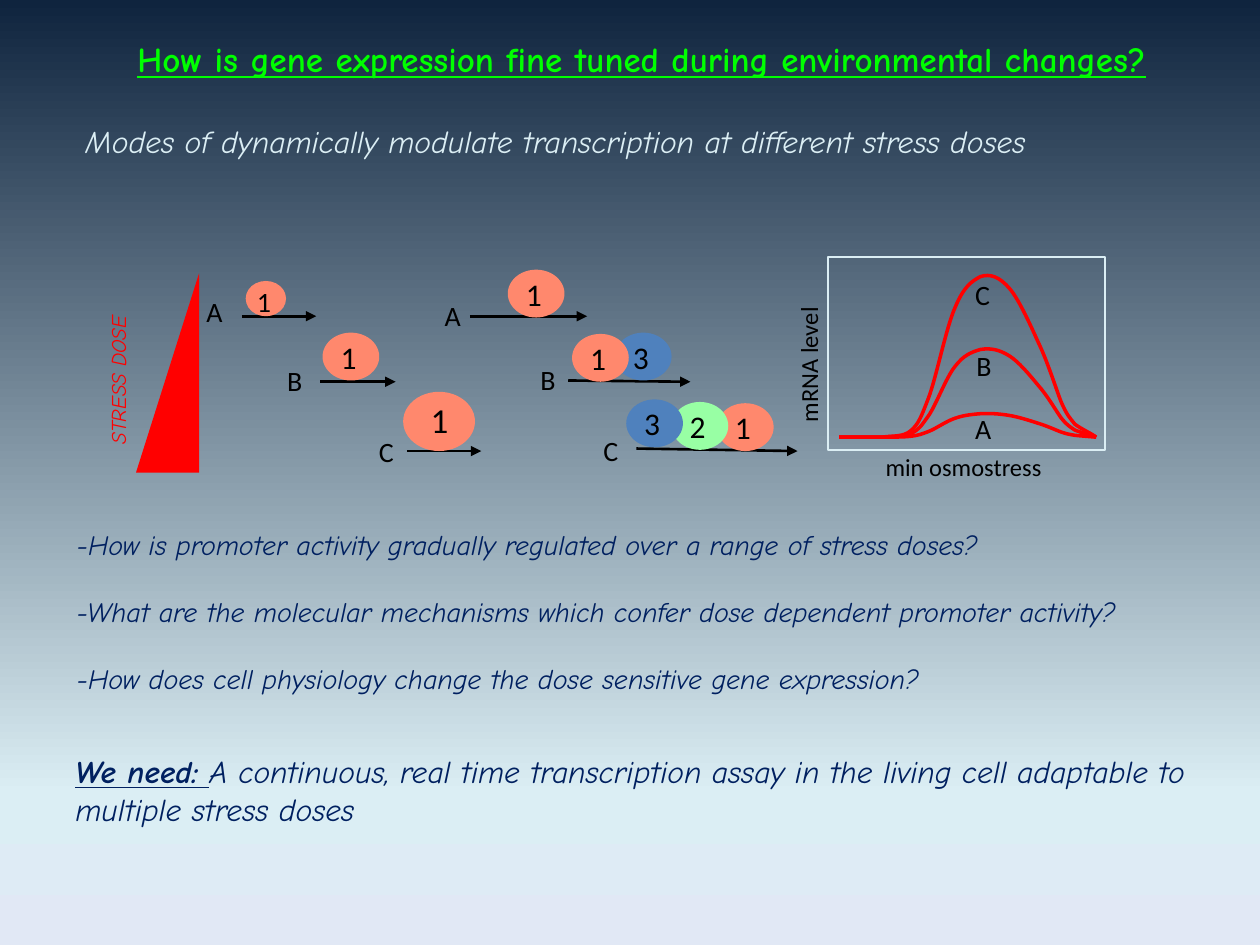
from copy import deepcopy

from lxml.etree import SubElement
from pptx import Presentation
from pptx.dml.color import RGBColor
from pptx.enum.shapes import MSO_CONNECTOR as Connector, MSO_SHAPE as Shape
from pptx.enum.text import MSO_ANCHOR as Anchor, MSO_AUTO_SIZE as AutoSize, PP_ALIGN as Align
from pptx.oxml.ns import qn
from pptx.util import Inches, Pt

COLUMNS = 100
WIDTH, HEIGHT = Inches(10), Inches(7.5)
CELL = WIDTH // COLUMNS
BLACK, RED, NAVY, ICE = "000000", "FF0000", "002060", "DBEEF4"
SALMON, BLUE, GREEN = "FF886D", "4F81BD", "98FFA4"
BACKGROUND = [(0, "0F243E"), (0.84, ICE), (1, "E1E8F5")]
COMIC, CALIBRI = "Comic Neue", "Calibri"

ARROWS = [
    (19.2, 25.1, 25.1, 25.1), (25.4, 30.3, 31.4, 30.3), (32.3, 35.8, 38.2, 35.8),
    (37.3, 25.1, 46.6, 25.1), (45.1, 30.2, 54.8, 30.3), (50.5, 35.6, 63.3, 35.8),
]
SMALL = {"oval": (3.2, 2.8), "shift": (-0.1, -0.2), "label": (3.1, 3.7), "points": 16}
MEDIUM = {"oval": (4.5, 3.8), "shift": (0.45, -0.1), "label": (3.3, 4), "points": 18}
LARGE = {"oval": (5.7, 4.7), "shift": (1.2, 0), "label": (3.4, 4.3), "points": 20}
FACTORS = [
    ("1", 19.5, 22.3, SMALL, SALMON), ("1", 25.6, 26.4, MEDIUM, SALMON),
    ("1", 32, 31.1, LARGE, SALMON), ("1", 40.3, 21.4, MEDIUM, SALMON),
    ("1", 56.9, 32, MEDIUM, SALMON), ("2", 53.3, 31.9, MEDIUM, GREEN),
    ("3", 48.8, 26.4, MEDIUM, BLUE), ("1", 45.4, 26.5, MEDIUM, SALMON),
    ("3", 49.7, 31.7, MEDIUM, BLUE),
]
LABELS = [
    ("A", 15.4, 22.9), ("B", 21.8, 28.4), ("C", 29.1, 34),
    ("A", 34.3, 23.2), ("B", 41.9, 28.3), ("C", 46.9, 33.9),
    ("A", 76.4, 32.2), ("B", 76.5, 27.2), ("C", 76.4, 21.5),
]
BASELINE = 34.7
PEAKS = [13, 7.1, 1.9]
PULSE = [
    (66.6, 0),
    (67.8, 0), (69, 0), (70, 0), (70.9, 0.01), (71.7, 0), (72.3, 0.04),
    (72.9, 0.08), (73.1, 0.12), (73.7, 0.24), (74.3, 0.36), (75.1, 0.67), (75.8, 0.79),
    (76.5, 0.92), (77.1, 0.95), (77.8, 0.98), (78.6, 1), (79.3, 0.98), (80.1, 0.91),
    (80.8, 0.85), (81.7, 0.7), (82.4, 0.58), (83.1, 0.47), (83.8, 0.3), (84.2, 0.22),
    (84.7, 0.13), (84.9, 0.12), (85.3, 0.08), (85.8, 0.05), (86.7, 0.02), (87, 0),
]
QUESTIONS = [
    "-How is promoter activity gradually regulated over a range of stress doses?",
    "-What are the molecular mechanisms which confer dose dependent promoter activity?",
    "-How does cell physiology change the dose sensitive gene expression?",
]


def cells(*lengths):
    return [round(length * CELL) for length in lengths]


def color(value):
    return RGBColor.from_string(value)


def apply(target, formats):
    for name, value in formats.items():
        setattr(target, name, value)


def font_format(size, name=CALIBRI, **extra):
    return {"size": Pt(size), "name": name, **extra}


def add_run(paragraph, text, ink, formats):
    run = paragraph.add_run()
    run.text = text
    apply(run.font, formats)
    run.font.color.rgb = color(ink)


def add_text(slide, box, lines, ink, formats, wrap=False, gap=0, rotation=0):
    shape = slide.shapes.add_textbox(*cells(*box))
    shape.rotation = rotation
    frame = shape.text_frame
    apply(frame, {"word_wrap": wrap, "auto_size": AutoSize.SHAPE_TO_FIT_TEXT})
    for index, line in enumerate(lines):
        paragraph = frame.add_paragraph() if index else frame.paragraphs[0]
        paragraph.space_before = Pt(gap if index else 0)
        add_run(paragraph, line, ink, formats)
    return frame


def outline(shape, ink, width):
    shape.line.color.rgb = color(ink)
    shape.line.width = Pt(width)


def add_shape(slide, kind, box, fill=None):
    shape = slide.shapes.add_shape(kind, *cells(*box))
    shape.shadow.inherit = False
    if fill:
        shape.fill.solid()
        shape.fill.fore_color.rgb = color(fill)
        shape.line.fill.background()
    else:
        shape.fill.background()
    return shape


def add_factor(slide, number, left, top, size, fill):
    across, down = size["shift"]
    add_shape(slide, Shape.OVAL, (left, top, *size["oval"]), fill)
    add_text(slide, (left + across, top + down, *size["label"]), [number], BLACK,
             font_format(size["points"]))


def add_arrow(slide, ends):
    arrow = slide.shapes.add_connector(Connector.STRAIGHT, *cells(*ends))
    outline(arrow, BLACK, 1.5)
    SubElement(arrow.line._get_or_add_ln(), qn("a:tailEnd"), type="triangle")
    SubElement(arrow.element.spPr, qn("a:effectLst"))


def bend_segments(curve):
    segments = list(curve.element.iter(qn("a:lnTo")))
    outline_path = segments[0].getparent()
    for index, segment in enumerate(segments):
        if index % 3 == 0:
            bend = SubElement(outline_path, qn("a:cubicBezTo"))
        bend.append(segment[0])
        outline_path.remove(segment)


def add_pulse(slide, peak):
    points = [cells(x, BASELINE - y * peak) for x, y in PULSE]
    builder = slide.shapes.build_freeform(*points[0])
    builder.add_line_segments(points[1:], close=False)
    curve = builder.convert_to_shape()
    bend_segments(curve)
    curve.shadow.inherit = False
    curve.fill.background()
    outline(curve, RED, 2)


def paint_background(slide):
    fill = slide.background.fill
    fill.gradient()
    fill.gradient_angle = 270
    stop_list = slide.element.find(".//" + qn("a:gsLst"))
    stop_list.append(deepcopy(stop_list[-1]))
    for stop, (position, value) in zip(fill.gradient_stops, BACKGROUND):
        stop.position = position
        stop.color.rgb = color(value)


def set_title(slide, text):
    title = slide.shapes.title
    apply(title, dict(zip(("left", "top", "width", "height"), cells(1.9, 2.5, 98.1, 4.3))))
    apply(title.text_frame, {"word_wrap": True, "vertical_anchor": Anchor.TOP,
                             "auto_size": AutoSize.SHAPE_TO_FIT_TEXT})
    paragraph = title.text_frame.paragraphs[0]
    paragraph.alignment = Align.CENTER
    add_run(paragraph, text, "00FF00", font_format(20, COMIC, bold=True, underline=True))


def add_promoters(slide):
    for ends in ARROWS:
        add_arrow(slide, ends)
    for factor in FACTORS:
        add_factor(slide, *factor)


def add_plot(slide):
    outline(add_shape(slide, Shape.RECTANGLE, (65.7, 20.4, 22, 15.3)), ICE, 1)
    for peak in PEAKS:
        add_pulse(slide, peak)
    add_text(slide, (58.6, 27.3, 11.1, 3.3), ["mRNA level"], BLACK, font_format(14), rotation=270)
    add_text(slide, (69.3, 35.4, 14.4, 3.3), ["min osmostress"], BLACK, font_format(14))


def add_dose_wedge(slide):
    wedge = add_shape(slide, Shape.ISOSCELES_TRIANGLE, (10.8, 21.7, 5, 15.8), RED)
    wedge.adjustments[0] = 1
    add_text(slide, (2.3, 27.7, 14.1, 3), ["STRESS DOSE"], RED,
             font_format(12, COMIC, italic=True), rotation=270)


def add_statements(slide):
    italic = font_format(18, COMIC, italic=True)
    add_text(slide, (5.8, 9.2, 87.5, 4),
             ["Modes of dynamically modulate transcription at different stress doses"],
             ICE, italic, wrap=True)
    need = add_text(slide, (5, 59.2, 91.7, 7), ["We need: "], NAVY,
                    {**italic, "bold": True, "underline": True}, wrap=True)
    add_run(need.paragraphs[0], "A continuous, real time transcription assay in the living cell "
            "adaptable to multiple stress doses", NAVY, italic)
    add_text(slide, (5.1, 41.4, 92.4, 17.2), QUESTIONS, NAVY,
             font_format(16, COMIC, italic=True), wrap=True, gap=19)


def main():
    presentation = Presentation()
    apply(presentation, {"slide_width": WIDTH, "slide_height": HEIGHT})
    slide = presentation.slides.add_slide(presentation.slide_layouts[5])
    paint_background(slide)
    set_title(slide, "How is gene expression fine tuned during environmental changes?")
    add_promoters(slide)
    add_plot(slide)
    for text, left, top in LABELS:
        add_text(slide, (left, top, 3.3, 3.7), [text], BLACK, font_format(16))
    add_statements(slide)
    add_dose_wedge(slide)
    presentation.save("out.pptx")


if __name__ == "__main__":
    main()
